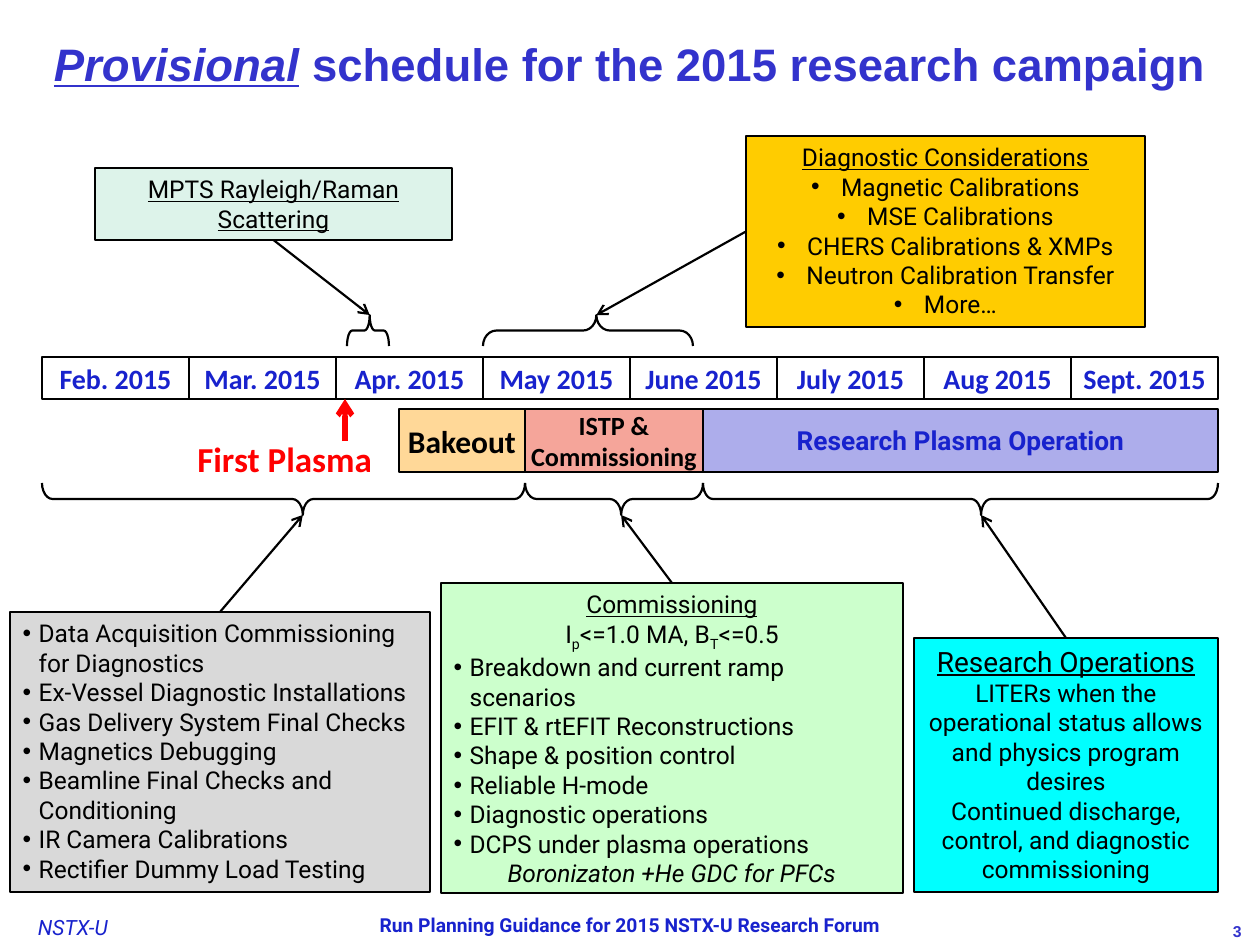
from dataclasses import dataclass, replace

from lxml.etree import SubElement
from pptx import Presentation
from pptx.dml.color import RGBColor
from pptx.enum.shapes import MSO_CONNECTOR as Conn, MSO_SHAPE as Shape
from pptx.enum.text import MSO_ANCHOR as Anchor, MSO_AUTO_SIZE as AutoSize, PP_ALIGN as Align
from pptx.oxml.ns import qn
from pptx.util import Pt

PX = 914400 / 126  # EMU in one px

BLACK = RGBColor(0x00, 0x00, 0x00)
RED = RGBColor(0xFF, 0x00, 0x00)
BLUE = RGBColor(0x18, 0x22, 0xCD)
TITLE_BLUE = RGBColor(0x33, 0x33, 0xCC)
LAVENDER = RGBColor(0xAD, 0xAD, 0xEB)
PEACH = RGBColor(0xFF, 0xD8, 0x98)
SALMON = RGBColor(0xF5, 0xA5, 0x9A)
GOLD = RGBColor(0xFF, 0xCC, 0x00)
GREEN = RGBColor(0xCC, 0xFF, 0xCC)
GRAY = RGBColor(0xD9, 0xD9, 0xD9)
MINT = RGBColor(0xDD, 0xF3, 0xEA)
CYAN = RGBColor(0x00, 0xFF, 0xFF)


@dataclass(frozen=True)
class Run:
    text: str
    size: int = 14
    font: str = "Roboto"
    color: RGBColor = BLACK
    bold: bool = False
    italic: bool = False
    underline: bool = False
    subscript: bool = False


@dataclass(frozen=True)
class Para:
    runs: tuple[Run, ...]
    align: Align = Align.CENTER
    hang: int = 0  # hanging indent of a bullet, 0 for no bullet


@dataclass(frozen=True)
class Box:
    left: int
    top: int
    width: int
    height: int


@dataclass(frozen=True)
class Bar:
    box: Box
    label: Run
    fill: RGBColor | None = None


def emu(px: float) -> int:
    return round(px * PX)


def line_of(*runs: Run) -> Para:
    return Para(runs)


def bullets(items: list[str], align: Align, hang: int) -> list[Para]:
    return [Para((Run(item),), align, hang) for item in items]


def place(sp, box: Box) -> None:
    sp.left, sp.top = emu(box.left), emu(box.top)
    sp.width, sp.height = emu(box.width), emu(box.height)


def paint(sp, fill: RGBColor | None, width: float) -> None:
    if fill is None:
        sp.fill.background()
    else:
        sp.fill.solid()
        sp.fill.fore_color.rgb = fill
    sp.line.color.rgb = BLACK
    sp.line.width = Pt(width)


def write(sp, paras: list[Para], anchor: Anchor = Anchor.TOP,
          inset: bool = True, wrap: bool = True) -> None:
    tf = sp.text_frame
    tf.word_wrap, tf.auto_size, tf.vertical_anchor = wrap, AutoSize.NONE, anchor
    side, edge = (emu(12.6), emu(6.3)) if inset else (0, 0)
    tf.margin_left = tf.margin_right = side
    tf.margin_top = tf.margin_bottom = edge
    for i, para in enumerate(paras):
        p = tf.add_paragraph() if i else tf.paragraphs[0]
        pPr = p._p.get_or_add_pPr()
        pPr.set("marL", str(emu(para.hang)))
        pPr.set("indent", str(-emu(para.hang)))
        if para.hang:
            SubElement(pPr, qn("a:buFont")).set("typeface", "Arial")
            SubElement(pPr, qn("a:buChar")).set("char", "•")
        else:
            SubElement(pPr, qn("a:buNone"))
        p.alignment, p.space_before = para.align, Pt(0)
        for run in para.runs:
            r = p.add_run()
            r.text = run.text
            f = r.font
            f.name, f.size, f.color.rgb = run.font, Pt(run.size), run.color
            f.bold, f.italic, f.underline = run.bold, run.italic, run.underline
            if run.subscript:
                r._r.get_or_add_rPr().set("baseline", "-25000")


def add_rect(shapes, box: Box, fill: RGBColor | None, width: float):
    sp = shapes.add_shape(Shape.RECTANGLE, 0, 0, 0, 0)
    place(sp, box)
    sp.shadow.inherit = False
    paint(sp, fill, width)
    return sp


def add_label(shapes, box: Box, run: Run, align: Align, **layout) -> None:
    sp = shapes.add_textbox(0, 0, 0, 0)
    place(sp, box)
    write(sp, [Para((run,), align)], **layout)


def add_brace(shapes, span: Box, curl: float, up: bool) -> tuple[float, int]:
    """Draw a brace lying along span and return its tip."""
    offset = (span.width - span.height) / 2
    sp = shapes.add_shape(Shape.RIGHT_BRACE, emu(span.left + offset), emu(span.top - offset),
                          emu(span.height), emu(span.width))
    sp.adjustments[0], sp.adjustments[1] = curl, 0.46
    sp.rotation = 90
    if up:
        sp._element.spPr.find(qn("a:xfrm")).set("flipH", "1")
    sp.shadow.inherit = False
    paint(sp, None, 1.25)
    return span.left + span.width * 0.54, span.top if up else span.top + span.height


def add_arrow(shapes, start: tuple[float, float], end: tuple[float, float],
              color: RGBColor = BLACK, width: float = 1.25):
    sp = shapes.add_connector(Conn.STRAIGHT, *map(emu, (*start, *end)))
    sp.line.color.rgb, sp.line.width = color, Pt(width)
    SubElement(sp.line._get_or_add_ln(), qn("a:tailEnd")).set("type", "arrow")
    SubElement(sp._element.spPr, qn("a:effectLst"))
    return sp


def main() -> None:
    prs = Presentation()
    prs.slide_width, prs.slide_height = emu(1260), emu(945)
    s = prs.slides.add_slide(prs.slide_layouts[4])
    shapes = s.shapes

    # Title
    title = Run("Provisional", 26, "Arial", TITLE_BLUE, True, True, True)
    place(shapes.title, Box(0, 0, 1260, 126))
    write(shapes.title, [line_of(title, replace(
        title, text=" schedule for the 2015 research campaign",
        italic=False, underline=False))], Anchor.MIDDLE)

    # Month row and phase bars
    months = ["Feb. 2015", "Mar. 2015", "Apr. 2015", "May 2015",
              "June 2015", "July 2015", "Aug 2015", "Sept. 2015"]
    bars = [Bar(Box(42 + 147 * i, 357, 147, 42), Run(month, 16, "Calibri", BLUE, True))
            for i, month in enumerate(months)]
    bars += [
        Bar(Box(703, 409, 515, 63), Run("Research Plasma Operation", 15, color=BLUE, bold=True), LAVENDER),
        Bar(Box(399, 409, 126, 63), Run("Bakeout", 18, "Calibri", bold=True), PEACH),
        Bar(Box(525, 409, 178, 63), Run("ISTP & Commissioning", 15, "Calibri", bold=True), SALMON),
    ]
    for bar in bars:
        sp = add_rect(shapes, bar.box, bar.fill, 1.25)
        write(sp, [line_of(bar.label)], Anchor.MIDDLE, inset=False)

    # First plasma marker
    add_arrow(shapes, (345, 441), (345, 399), RED, 3)
    add_label(shapes, Box(185, 431, 203, 55), Run("First Plasma", 20, "Calibri", RED, True),
              Align.LEFT, wrap=False)

    # Notes about each phase
    commissioning = [
        line_of(Run("Commissioning", underline=True)),
        line_of(Run("I"), Run("p", subscript=True), Run("<=1.0 MA, B"),
                Run("T", subscript=True), Run("<=0.5")),
        *bullets(["Breakdown and current ramp scenarios", "EFIT & rtEFIT Reconstructions",
                  "Shape & position control", "Reliable H-mode", "Diagnostic operations",
                  "DCPS under plasma operations"], Align.LEFT, 16),
        line_of(Run("Boronizaton +He GDC for PFCs", italic=True)),
    ]
    preparation = bullets([
        "Data Acquisition Commissioning for Diagnostics", "Ex-Vessel Diagnostic Installations",
        "Gas Delivery System Final Checks", "Magnetics Debugging",
        "Beamline Final Checks and Conditioning", "IR Camera Calibrations",
        "Rectifier Dummy Load Testing"], Align.LEFT, 16)
    diagnostics = [
        line_of(Run("Diagnostic Considerations", underline=True)),
        *bullets(["Magnetic Calibrations", "MSE Calibrations", "CHERS Calibrations & XMPs",
                  "Neutron Calibration Transfer", "More…"], Align.CENTER, 30),
    ]
    research = [
        line_of(Run("Research Operations", 16, underline=True)),
        line_of(Run("LITERs when the operational status allows and physics program desires")),
        line_of(Run("Continued discharge, control, and diagnostic commissioning")),
    ]
    scattering = [line_of(Run("MPTS Rayleigh/Raman Scattering", underline=True))]
    bodies = [sp for sp in s.placeholders if sp.placeholder_format.idx]

    # Box, fill, text, connected side, then brace span and curl
    notes = [
        (Box(10, 612, 420, 280), GRAY, preparation, 0, Box(42, 483, 483, 32), 0.33),
        (Box(441, 583, 462, 310), GREEN, commissioning, 0, Box(525, 483, 178, 32), 0.36),
        (Box(914, 638, 304, 254), CYAN, research, 0, Box(703, 483, 515, 32), 0.31),
        (Box(746, 136, 399, 191), GOLD, diagnostics, 1, Box(483, 315, 210, 31), 0.43),
        (Box(95, 168, 357, 72), MINT, scattering, 2, Box(347, 315, 42, 31), 0.17),
    ]
    for i, (box, fill, paras, side, span, curl) in enumerate(notes):
        if i < len(bodies):
            sp = bodies[i]
            place(sp, box)
            paint(sp, fill, 0.75)
        else:
            sp = add_rect(shapes, box, fill, 0.75)
        write(sp, paras)
        tip = add_brace(shapes, span, curl, up=side != 0)
        add_arrow(shapes, (box.left, box.top), tip).begin_connect(sp, side)

    # Footer
    add_label(shapes, Box(38, 915, 110, 25), Run("NSTX-U", 12, color=BLUE, italic=True),
              Align.LEFT, inset=False)
    add_label(shapes, Box(252, 907, 756, 48),
              Run("Run Planning Guidance for 2015 NSTX-U Research Forum", 11, color=BLUE, bold=True),
              Align.CENTER)
    add_label(shapes, Box(1149, 921, 105, 21), Run("3", 9, "Arial", TITLE_BLUE, True),
              Align.RIGHT, anchor=Anchor.MIDDLE)

    prs.save("out.pptx")


if __name__ == "__main__":
    main()
